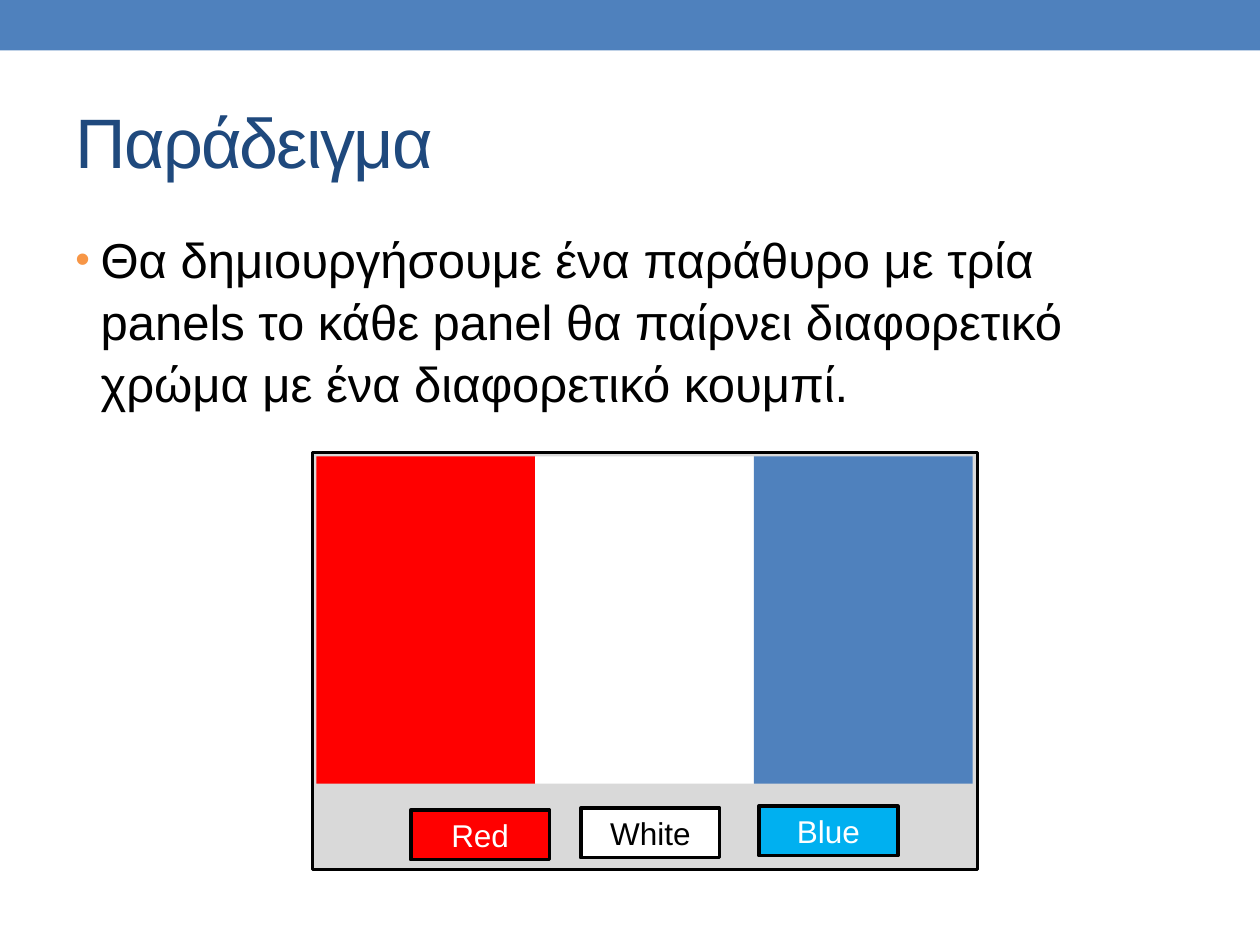
from dataclasses import dataclass

from lxml.etree import SubElement
from pptx import Presentation
from pptx.dml.color import RGBColor as Rgb
from pptx.enum.shapes import MSO_SHAPE as Shape
from pptx.enum.text import MSO_ANCHOR as Anchor, PP_ALIGN as Align
from pptx.oxml.ns import qn
from pptx.util import Cm, Pt


@dataclass(frozen=True)
class Theme:
    font: str = "Arial"
    title_size: float = 40
    body_size: float = 28
    button_size: float = 18
    line_width: float = 2.08
    blue: str = "4F81BD"
    navy: str = "1F497D"
    orange: str = "F79646"
    grey: str = "D9D9D9"
    red: str = "FF0000"
    sky: str = "00B0F0"
    white: str = "FFFFFF"
    black: str = "000000"


class SlideBuilder:
    def __init__(self, slide, theme):
        self.slide = slide
        self.theme = theme

    def style_text(self, paragraph, size, color):
        for run in paragraph.runs:
            run.font.name = self.theme.font
            run.font.size = Pt(size)
            run.font.color.rgb = Rgb.from_string(color)

    def title(self, text, left, top, width, height):
        title = self.slide.shapes.title
        title.left, title.top, title.width, title.height = map(Cm, (left, top, width, height))
        frame = title.text_frame
        frame.text = text
        frame.vertical_anchor = Anchor.MIDDLE
        paragraph = frame.paragraphs[0]
        paragraph.alignment = Align.LEFT
        self.style_text(paragraph, self.theme.title_size, self.theme.navy)
        paragraph.runs[0].font._element.set("spc", "-100")

    def bullet(self, text, left, top, width, height):
        box = self.slide.shapes.add_textbox(*map(Cm, (left, top, width, height)))
        frame = box.text_frame
        frame.word_wrap = True
        frame.text = text
        paragraph = frame.paragraphs[0]
        paragraph.space_before = Pt(0.2 * self.theme.body_size)
        paragraph.line_spacing = 1.05
        self.style_text(paragraph, self.theme.body_size, self.theme.black)
        properties = paragraph._p.get_or_add_pPr()
        indent = Cm(0.51)
        properties.set("marL", str(indent))
        properties.set("indent", str(-indent))
        color = SubElement(properties, qn("a:buClr"))
        SubElement(color, qn("a:srgbClr"), val=self.theme.orange)
        SubElement(properties, qn("a:buSzPct"), val="85000")
        SubElement(properties, qn("a:buFont"), typeface=self.theme.font)
        SubElement(properties, qn("a:buChar"), char="•")

    def rectangle(self, left, top, width, height, fill, outlined=False):
        shape = self.slide.shapes.add_shape(
            Shape.RECTANGLE, *map(Cm, (left, top, width, height)))
        shape.shadow.inherit = False
        shape.fill.solid()
        shape.fill.fore_color.rgb = Rgb.from_string(fill)
        if outlined:
            shape.line.color.rgb = Rgb.from_string(self.theme.black)
            shape.line.width = Pt(self.theme.line_width)
        else:
            shape.line.fill.background()
        return shape

    def button(self, text, left, top, fill, color):
        shape = self.rectangle(left, top, 2.8, 1, fill, outlined=True)
        frame = shape.text_frame
        frame.text = text
        frame.vertical_anchor = Anchor.MIDDLE
        paragraph = frame.paragraphs[0]
        paragraph.alignment = Align.CENTER
        self.style_text(paragraph, self.theme.button_size, color)


def main():
    theme = Theme()
    presentation = Presentation()
    presentation.slide_width, presentation.slide_height = Cm(25.4), Cm(19.05)
    slide = presentation.slides.add_slide(presentation.slide_layouts[5])
    builder = SlideBuilder(slide, theme)

    builder.rectangle(0, 0, 25.4, 1.02, theme.blue)
    builder.title("Παράδειγμα", 1.27, 1.47, 22.86, 2.74)
    builder.bullet(
        "Θα δημιουργήσουμε ένα παράθυρο με τρία panels το κάθε panel θα "
        "παίρνει διαφορετικό χρώμα με ένα διαφορετικό κουμπί.",
        1.27, 4.45, 22.86, 13.54)

    builder.rectangle(6.3, 9.12, 13.41, 8.41, theme.grey, outlined=True)
    for text, left, top, fill, color in (
        ("Red", 8.28, 16.33, theme.red, theme.white),
        ("White", 11.71, 16.29, theme.white, theme.black),
        ("Blue", 15.3, 16.25, theme.sky, theme.white),
    ):
        builder.button(text, left, top, fill, color)

    panel_width = 4.41
    for column, fill in enumerate((theme.red, theme.white, theme.blue)):
        builder.rectangle(6.38 + column * panel_width, 9.2, panel_width, 6.6, fill)

    presentation.save("out.pptx")


if __name__ == "__main__":
    main()
